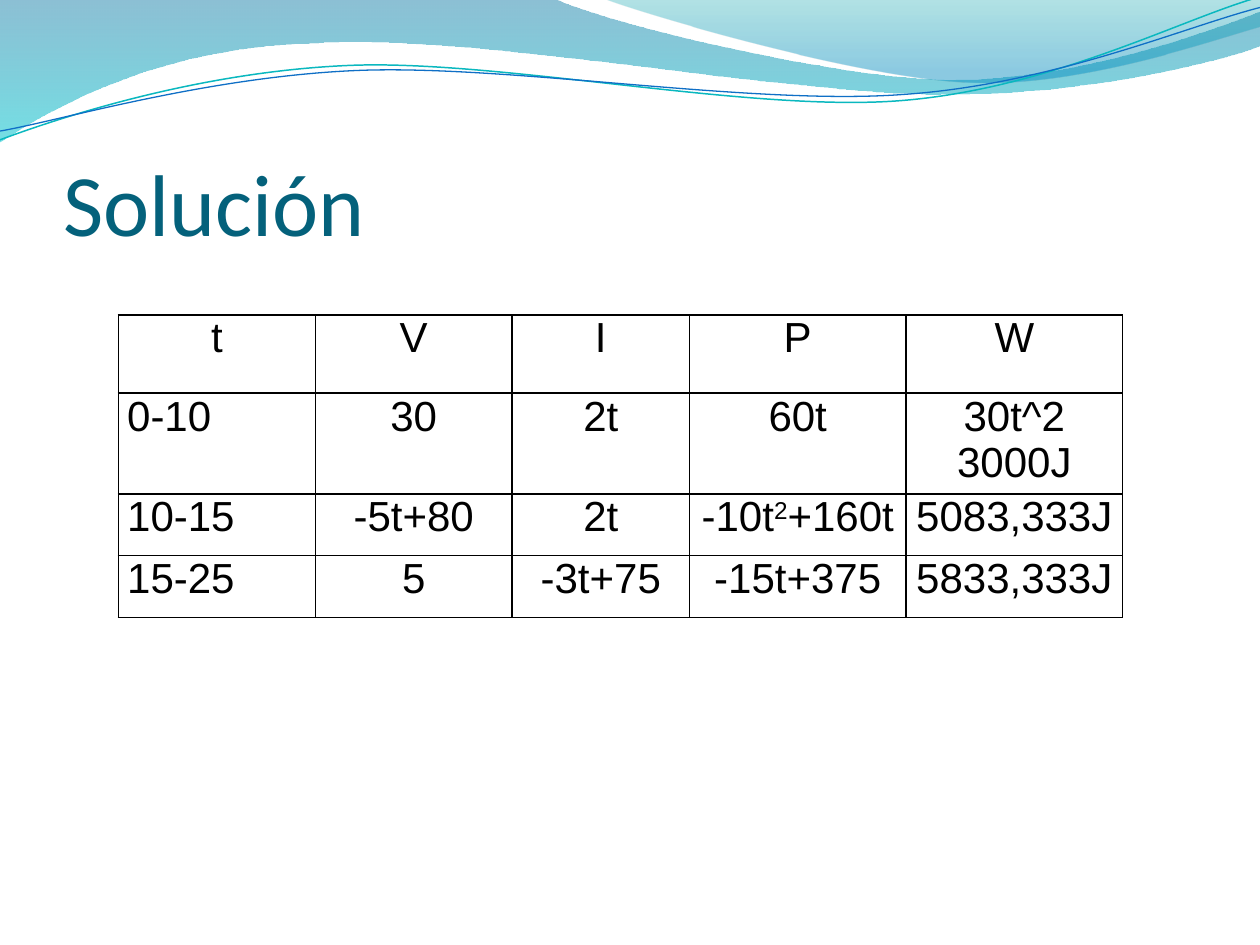
from dataclasses import dataclass
from math import cos, radians, sin

from lxml.etree import SubElement
from pptx import Presentation
from pptx.dml.color import RGBColor
from pptx.enum.text import MSO_ANCHOR, PP_ALIGN
from pptx.oxml.ns import qn
from pptx.util import Pt


@dataclass(frozen=True)
class Theme:
    head: str = "04617B"
    ink: str = "000000"
    teal: str = "0AB8BF"
    blue: str = "0F6FC6"
    wide: tuple = ((0, "0074A1", 45), (1, "00C6CF", 55))
    small: tuple = ((0, "00A1A9", 30), (0.8, "008BBF", 45))
    title: int = 50
    body: int = 24
    sans: str = "Calibri"
    grid: str = "Arial"


def turn(dot, angle, hub):
    c, s = cos(radians(angle)), sin(radians(angle))
    x, y = dot[0] - hub[0], dot[1] - hub[1]
    return hub[0] + x * c - y * s, hub[1] + x * s + y * c


class Deck:
    def __init__(self, slide, theme):
        self.slide = slide
        self.theme = theme

    def shape(self, parts, close):
        first, *rest = [(Pt(x), Pt(y)) for part in parts for x, y in part]
        pen = self.slide.shapes.build_freeform(*first)
        pen.add_line_segments(rest, close=close)
        shape = pen.convert_to_shape()
        shape.shadow.inherit = False
        lines = iter(list(shape._element.iter(qn("a:lnTo"))))
        for part in parts[1:]:
            bend, *others = [next(lines) for _ in part]
            if others:
                bend.tag = qn("a:cubicBezTo")
            for line in others:
                bend.append(line[0])
                line.getparent().remove(line)
        return shape

    def wave(self, parts, stops):
        shape = self.shape(parts, True)
        shape.line.fill.background()
        shape.fill.gradient()
        shape.fill.gradient_angle = 270
        for stop, (place, color, _) in zip(shape.fill.gradient_stops, stops):
            stop.position = place
            stop.color.rgb = RGBColor.from_string(color)
        tints = shape._element.spPr.iter(qn("a:srgbClr"))
        for tint, (_, _, alpha) in zip(tints, stops):
            SubElement(tint, qn("a:alpha")).set("val", str(alpha * 1000))

    def curve(self, parts, color, width, hub, tilt=2.7):
        level = [[turn(dot, tilt, hub) for dot in part] for part in parts]
        shape = self.shape(level, False)
        shape.rotation = 360 - tilt
        shape.fill.background()
        shape.line.color.rgb = RGBColor.from_string(color)
        shape.line.width = Pt(width)

    def style(self, para, font, size, color):
        para.font.name = font
        para.font.size = Pt(size)
        para.font.color.rgb = RGBColor.from_string(color)

    def title(self, text, box):
        frame = self.slide.shapes.add_textbox(*map(Pt, box)).text_frame
        frame.word_wrap = True
        frame.vertical_anchor = MSO_ANCHOR.BOTTOM
        frame.margin_left = frame.margin_right = frame.margin_bottom = 0
        frame.text = text
        theme = self.theme
        self.style(frame.paragraphs[0], theme.sans, theme.title, theme.head)

    def border(self, cell):
        props = cell._tc.get_or_add_tcPr()
        for rank, side in enumerate(("lnL", "lnR", "lnT", "lnB")):
            line = SubElement(props, qn(f"a:{side}"), w=str(Pt(1)))
            fill = SubElement(line, qn("a:solidFill"))
            SubElement(fill, qn("a:srgbClr"), val=self.theme.ink)
            props.insert(rank, line)

    def cell(self, cell, text, align):
        cell.fill.background()
        cell.margin_left = cell.margin_right = Pt(5)
        cell.margin_top = cell.margin_bottom = 0
        para = cell.text_frame.paragraphs[0]
        para.alignment = align
        self.style(para, self.theme.grid, self.theme.body, self.theme.ink)
        for rank, part in enumerate(text.split("|")):
            run = para.add_run()
            run.text = part
            if rank % 2:
                run._r.get_or_add_rPr().set("baseline", "30000")
        self.border(cell)

    def table(self, rows, box, widths, heights):
        frame = self.slide.shapes.add_table(len(heights), len(widths), *map(Pt, box))
        table = frame.table
        table.first_row = table.horz_banding = False
        for col, width in zip(table.columns, widths):
            col.width = Pt(width)
        for row, height in zip(table.rows, heights):
            row.height = Pt(height)
        frame.height = Pt(box[3])
        for r, row in enumerate(rows):
            for c, text in enumerate(row):
                align = PP_ALIGN.JUSTIFY if r and not c else PP_ALIGN.CENTER
                self.cell(table.cell(r, c), text, align)


ROWS = (
    ("t", "V", "I", "P", "W"),
    ("0-10", "30", "2t", "60t", "30t^2 3000J"),
    ("10-15", "-5t+80", "2t", "-10t|2|+160t", "5083,333J"),
    ("15-25", "5", "-3t+75", "-15t+375", "5833,333J"),
)


def main():
    show = Presentation()
    show.slide_width, show.slide_height = Pt(720), Pt(540)
    theme = Theme()
    deck = Deck(show.slides.add_slide(show.slide_layouts[6]), theme)

    deck.wave((
        [(0, 0)],
        [(316.8, -0.7)],
        [(342.7, 12.2), (478.1, 45.4), (545.8, 45.4)],
        [(614.2, 45.4), (689.8, 18.7), (720, 6.5)],
        [(720.7, 25.9)],
        [(707.8, 31.7), (626.4, 54.7), (537.1, 54)],
        [(447.8, 54), (275, 20.2), (185, 24.5)],
        [(92.9, 25.9), (33.1, 59.8), (-0.7, 81.4)],
    ), theme.wide)
    deck.wave((
        [(344.9, -0.7)],
        [(366.5, 7.9), (491, 44.6), (553.7, 46.8)],
        [(616.3, 49.7), (691.9, 23), (720, 15.1)],
        [(720, 0)],
    ), theme.small)
    deck.curve((
        [(0, 79.9)],
        [(34.6, 67), (113.8, 41), (199.4, 37.4)],
        [(284.4, 33.8), (427, 64.1), (513.4, 57.6)],
        [(599.8, 51.1), (675.4, 10.8), (718.6, -1.4)],
    ), theme.teal, 0.85, (359.3, 41.4))
    deck.curve((
        [(0, 74.9)],
        [(33.8, 69.1), (118.1, 43.9), (203.8, 40.3)],
        [(290.2, 36.7), (429.8, 60.5), (516.2, 54)],
        [(601.9, 48.2), (677.5, 15.1), (720, 4.3)],
    ), theme.blue, 0.75, (359.6, 42.5))

    deck.title("Solución", (36, 55.4, 653.8, 90))
    widths = (112.5, 112.5, 101.3, 123.8, 123.8)
    deck.table(ROWS, (67.7, 180, sum(widths), 172.8), widths, (44.6, 0, 35.3, 35.3))
    show.save("out.pptx")


if __name__ == "__main__":
    main()
